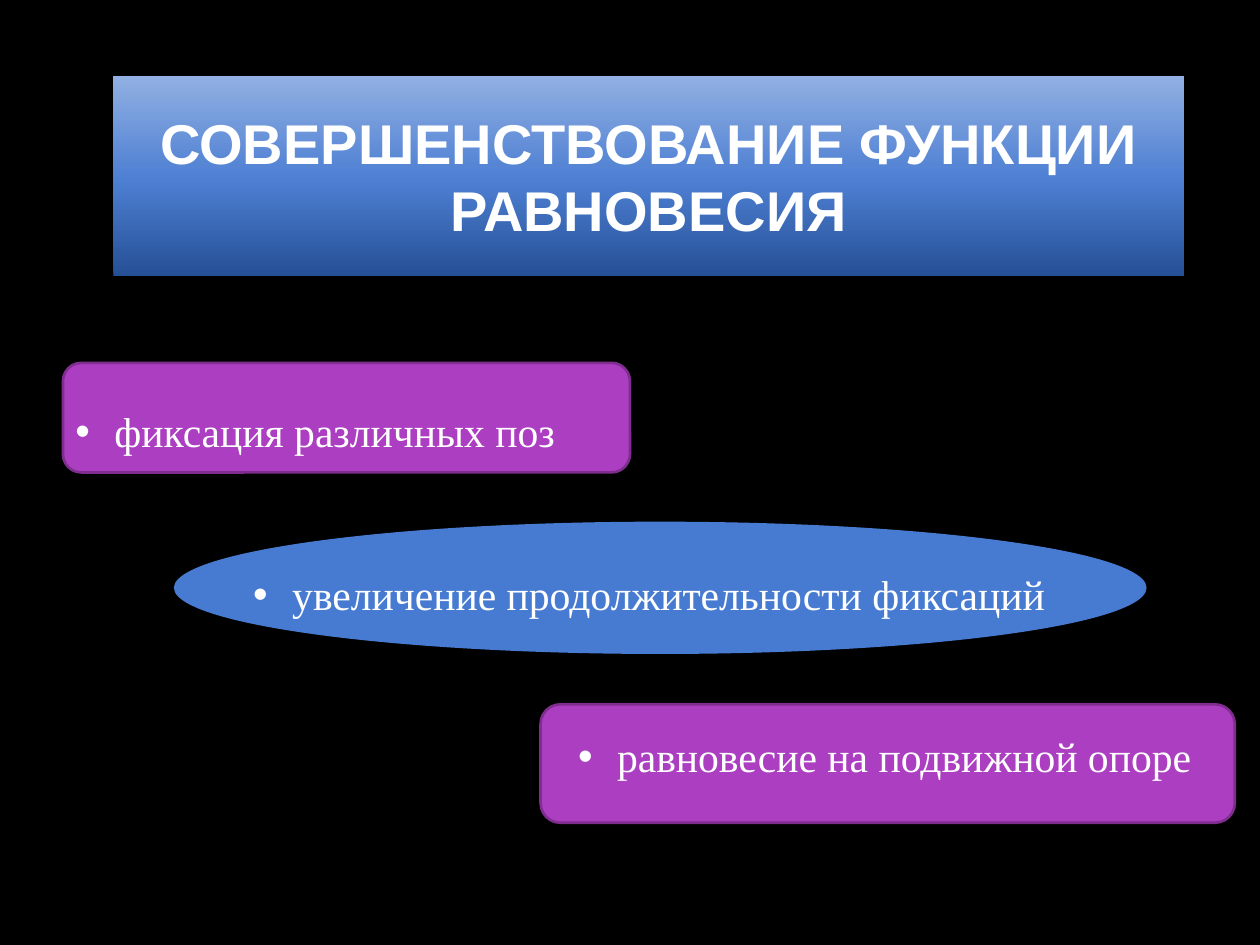
from copy import deepcopy
from dataclasses import dataclass

from lxml import etree
from pptx import Presentation
from pptx.dml.color import RGBColor as Color
from pptx.enum.shapes import MSO_SHAPE as Shape
from pptx.enum.text import MSO_ANCHOR as Anchor, PP_ALIGN as Align
from pptx.oxml.ns import qn
from pptx.util import Inches, Pt


@dataclass(frozen=True)
class Theme:
    background: str = "000000"
    text: str = "FFFFFF"
    purple: str = "AC3EC1"
    purple_edge: str = "7F2E8F"
    blue: str = "477BD1"
    title_stops: tuple = ((0, "265096"), (0.48, "4D7FD2"), (1, "91B0E3"))
    title_font: str = "Arial"
    body_font: str = "Times New Roman"
    title_size: float = 32
    body_size: float = 23.8
    edge_width: float = 1.5


THEME = Theme()
WIDTH, HEIGHT = Inches(10), Inches(7.5)
COLUMNS, ROWS = 100, 75


def grid(left, top, columns, rows):
    return (
        round(WIDTH * left / COLUMNS),
        round(HEIGHT * top / ROWS),
        round(WIDTH * columns / COLUMNS),
        round(HEIGHT * rows / ROWS),
    )


def add_panel(page, kind, box, fill=None, edge=None):
    panel = page.shapes.add_shape(kind, *box)
    panel.shadow.inherit = False
    if fill:
        panel.fill.solid()
        panel.fill.fore_color.rgb = Color.from_string(fill)
    if edge:
        panel.line.color.rgb = Color.from_string(edge)
        panel.line.width = Pt(THEME.edge_width)
    else:
        panel.line.fill.background()
    return panel


def fill_gradient(panel, stops):
    panel.fill.gradient()
    panel.fill.gradient_angle = 90
    stop_list = next(panel.element.iter(qn("a:gsLst")))
    for _ in range(len(stops) - len(stop_list)):
        stop_list.append(deepcopy(stop_list[0]))
    for stop, (position, color) in zip(panel.fill.gradient_stops, stops):
        stop.position = position
        stop.color.rgb = Color.from_string(color)


def add_bullet(para, indent, right_margin):
    properties = para._p.get_or_add_pPr()
    properties.set("marL", str(indent))
    properties.set("indent", str(-indent))
    properties.set("marR", str(right_margin))
    color = etree.SubElement(properties, qn("a:buClr"))
    etree.SubElement(color, qn("a:srgbClr"), val=THEME.text)
    etree.SubElement(properties, qn("a:buFont"), typeface="Arial")
    etree.SubElement(properties, qn("a:buChar"), char="•")


def write(para, text, *, font, size, align, bold=False, spacing=None, after=0):
    para.alignment = align
    para.space_after = Pt(after)
    if spacing:
        para.line_spacing = spacing
    span = para.add_run()
    span.text = text
    span.font.name = font
    span.font.size = Pt(size)
    span.font.bold = bold
    span.font.color.rgb = Color.from_string(THEME.text)


def add_title(page, box, text):
    panel = add_panel(page, Shape.RECTANGLE, box)
    fill_gradient(panel, THEME.title_stops)
    frame = panel.text_frame
    frame.word_wrap = True
    frame.vertical_anchor = Anchor.MIDDLE
    write(frame.paragraphs[0], text, font=THEME.title_font,
          size=THEME.title_size, align=Align.CENTER, bold=True)


def add_goals(page, box, goals):
    frame = page.shapes.add_textbox(*box).text_frame
    frame.word_wrap = True
    frame.vertical_anchor = Anchor.MIDDLE
    for index, (text, align, right_margin) in enumerate(goals):
        para = frame.add_paragraph() if index else frame.paragraphs[0]
        add_bullet(para, Inches(0.31), Inches(right_margin))
        write(para, text, font=THEME.body_font, size=THEME.body_size,
              align=align, spacing=2.9, after=10)


def build_page(page):
    page.background.fill.solid()
    page.background.fill.fore_color.rgb = Color.from_string(THEME.background)
    add_panel(page, Shape.ROUNDED_RECTANGLE, grid(42.9, 55.9, 55.1, 9.4),
              THEME.purple, THEME.purple_edge)
    add_panel(page, Shape.OVAL, grid(13.8, 41.4, 77.2, 10.5), THEME.blue)
    add_title(page, grid(9, 6, 85, 15.9), "СОВЕРШЕНСТВОВАНИЕ ФУНКЦИИ РАВНОВЕСИЯ")
    add_panel(page, Shape.ROUNDED_RECTANGLE, grid(5, 28.8, 45, 8.7),
              THEME.purple, THEME.purple_edge)
    add_goals(page, grid(5, 23.4, 93, 39.9), (
        ("фиксация различных поз", Align.LEFT, 0),
        ("увеличение продолжительности фиксаций", Align.CENTER, 0),
        ("равновесие на подвижной опоре", Align.RIGHT, 0.25),
    ))


def main():
    deck = Presentation()
    deck.slide_width, deck.slide_height = WIDTH, HEIGHT
    build_page(deck.slides.add_slide(deck.slide_layouts[6]))
    deck.save("out.pptx")


if __name__ == "__main__":
    main()
